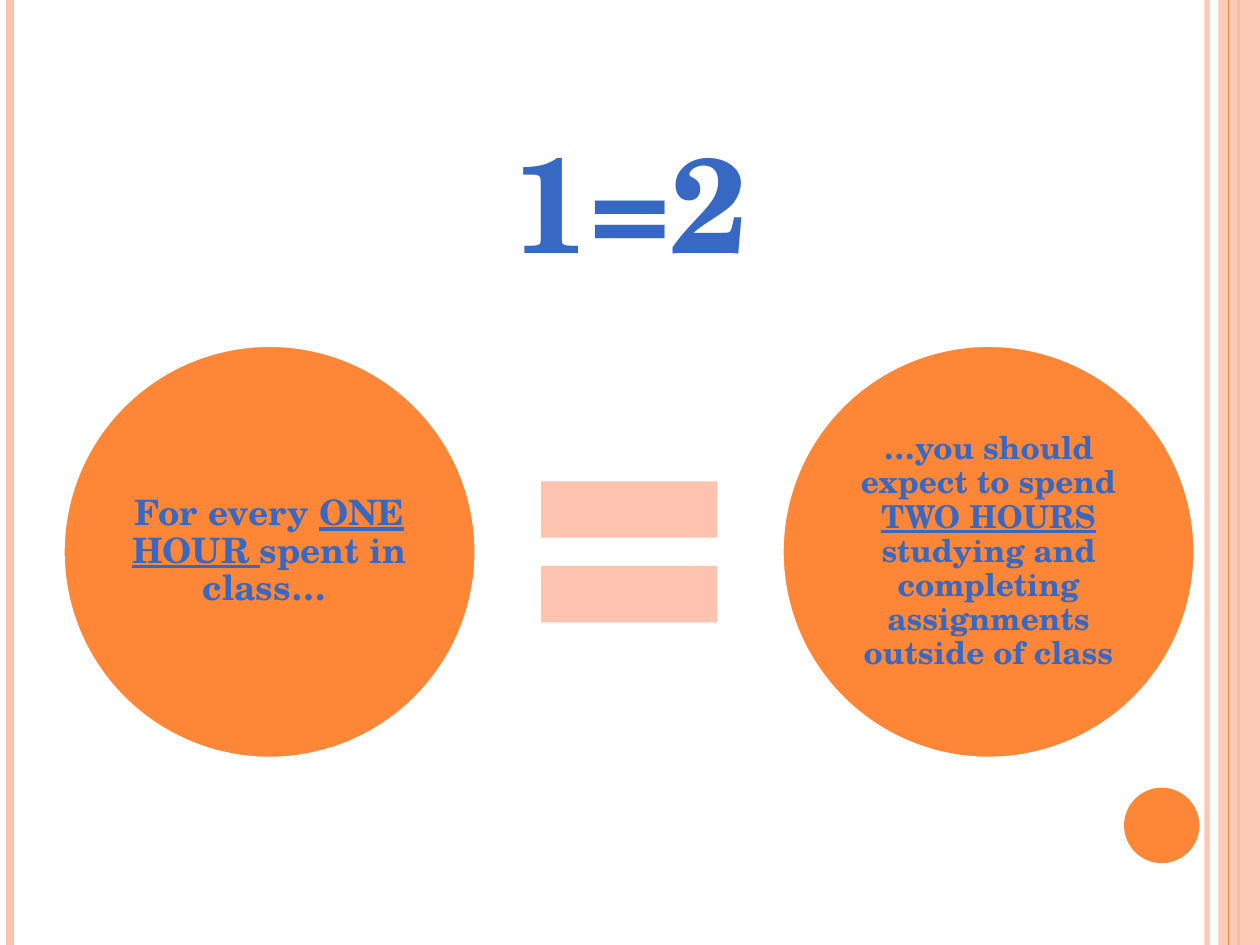
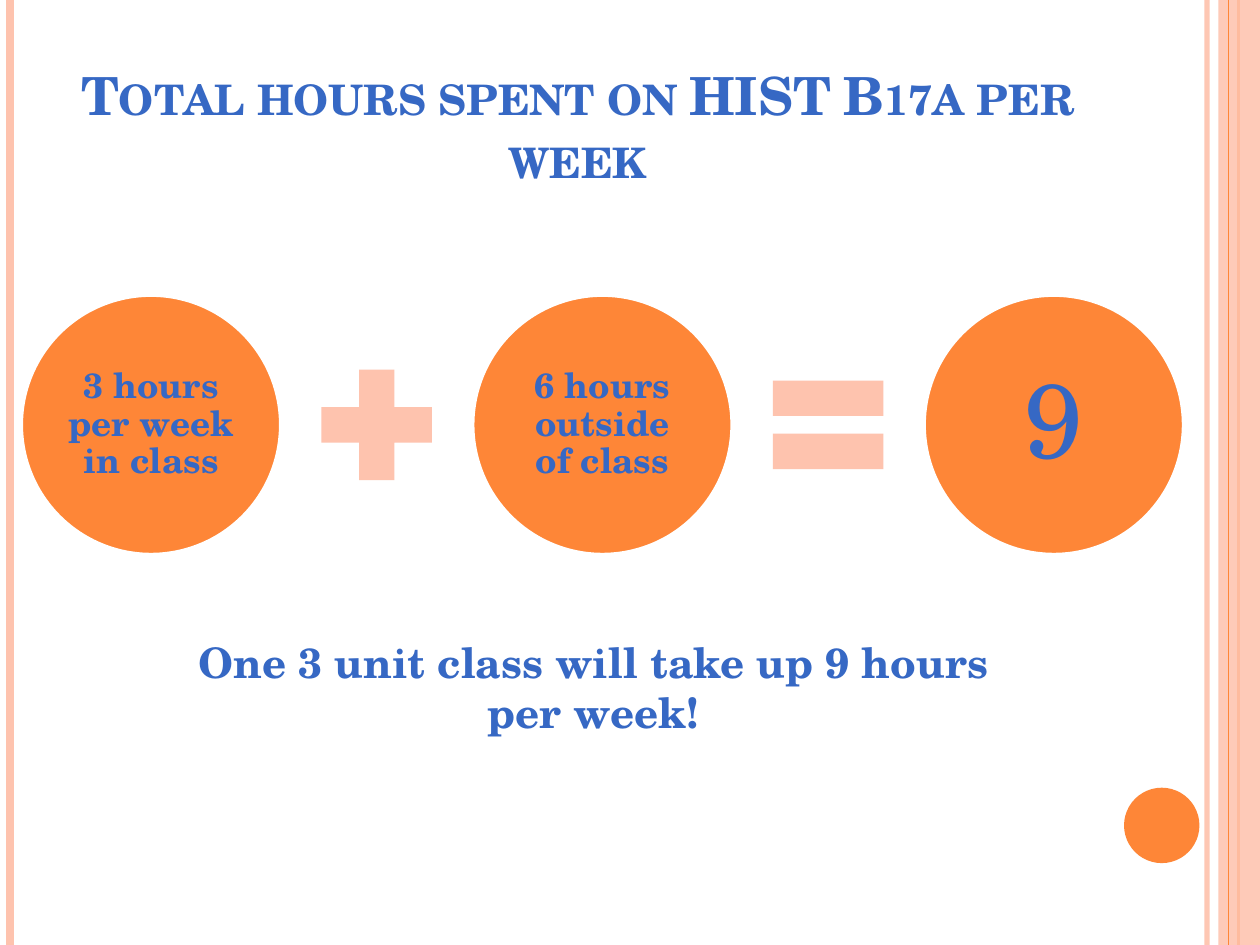
from lxml.etree import SubElement
from pptx import Presentation
from pptx.dml.color import RGBColor
from pptx.enum.shapes import MSO_CONNECTOR, MSO_SHAPE
from pptx.enum.text import MSO_ANCHOR, MSO_AUTO_SIZE, PP_ALIGN
from pptx.oxml.ns import qn
from pptx.util import Cm, Pt

SLIDE_WIDTH, SLIDE_HEIGHT = 25.4, 19.05
TITLE_ONLY = 5


def color(hex_string):
    return RGBColor.from_string(hex_string)


class Deck:
    FONT = "TeX Gyre Schola"
    BLUE, ORANGE, PEACH, WHITE = "3668C4", "FE8637", "FEC3AE", "FFFFFF"

    def __init__(self):
        self.presentation = Presentation()
        self.presentation.slide_width = Cm(SLIDE_WIDTH)
        self.presentation.slide_height = Cm(SLIDE_HEIGHT)
        self.slide = None

    def new_slide(self):
        layout = self.presentation.slide_layouts[TITLE_ONLY]
        self.slide = self.presentation.slides.add_slide(layout)
        self.frame()

    # Edge lines, right band and corner dot shared by all slides
    def frame(self):
        self.edge_line(24.33, self.PEACH, 3, opacity=93)
        self.edge_line(0.21, self.PEACH, 4.5)
        self.edge_line(24.97, self.ORANGE, 1.5)
        band = self.shape(MSO_SHAPE.RECTANGLE, 24.56, 0, 0.84, SLIDE_HEIGHT, self.PEACH)
        self.set_opacity(band, 87)
        self.edge_line(24.77, self.ORANGE, 0.75)
        self.shape(MSO_SHAPE.OVAL, 22.66, 15.88, 1.52, 1.52, self.ORANGE)

    def set_opacity(self, shape, percent):
        rgb = next(shape._element.spPr.iter(qn("a:srgbClr")))
        SubElement(rgb, qn("a:alpha"), val=str(percent * 1000))

    def edge_line(self, x, line_color, width, opacity=None):
        line = self.slide.shapes.add_connector(
            MSO_CONNECTOR.STRAIGHT, Cm(x), Cm(0), Cm(x), Cm(SLIDE_HEIGHT))
        line.line.color.rgb = color(line_color)
        line.line.width = Pt(width)
        SubElement(line._element.spPr, qn("a:effectLst"))
        if opacity:
            self.set_opacity(line, opacity)

    def shape(self, kind, left, top, width, height, fill):
        shape = self.slide.shapes.add_shape(kind, Cm(left), Cm(top), Cm(width), Cm(height))
        shape.shadow.inherit = False
        shape.fill.solid()
        shape.fill.fore_color.rgb = color(fill)
        shape.line.fill.background()
        return shape

    def style(self, paragraph, size, bold=True):
        paragraph.alignment = PP_ALIGN.CENTER
        paragraph.font.name = self.FONT
        paragraph.font.size = Pt(size)
        paragraph.font.bold = bold
        paragraph.font.color.rgb = color(self.BLUE)

    def title(self, text, left, top, width, height, size):
        title = self.slide.shapes.title
        title.left, title.top, title.width, title.height = map(Cm, (left, top, width, height))
        frame = title.text_frame
        frame.text = text
        frame.auto_size = MSO_AUTO_SIZE.NONE
        frame.vertical_anchor = MSO_ANCHOR.BOTTOM
        paragraph = frame.paragraphs[0]
        self.style(paragraph, size)
        paragraph.runs[0]._r.get_or_add_rPr().set("cap", "small")

    def circle(self, left, top, diameter, parts, size, bold=True):
        """Draw a term; every second part of its text is underlined."""
        circle = self.shape(MSO_SHAPE.OVAL, left, top, diameter, diameter, self.ORANGE)
        circle.line.color.rgb = color(self.WHITE)
        circle.line.width = Pt(2)
        frame = circle.text_frame
        frame.word_wrap = True
        frame.vertical_anchor = MSO_ANCHOR.MIDDLE
        frame.margin_left = frame.margin_right = Cm(0.08)
        frame.margin_top = frame.margin_bottom = Cm(0.08)
        paragraph = frame.paragraphs[0]
        paragraph.line_spacing = 0.9
        self.style(paragraph, size, bold)
        for index, text in enumerate(parts):
            run = paragraph.add_run()
            run.text = text
            if index % 2:
                run.font.underline = True

    def equation(self, left, top, diameter, terms, operators):
        """Set circles in a row with an operator centred between each pair."""
        operator_size, gap = 0.58 * diameter, 0.08 * diameter
        step = diameter + operator_size + 2 * gap
        for index, term in enumerate(terms):
            self.circle(left + index * step, top, diameter, *term)
        for index, operator in enumerate(operators):
            self.shape(operator, left + index * step + diameter + gap,
                       top + (diameter - operator_size) / 2,
                       operator_size, operator_size, self.PEACH)

    def caption(self, text, left, top, width, height, size):
        box = self.slide.shapes.add_textbox(Cm(left), Cm(top), Cm(width), Cm(height))
        box.text_frame.word_wrap = True
        box.text_frame.text = text
        self.style(box.text_frame.paragraphs[0], size)


def main():
    deck = Deck()

    # Slide 1: one class hour equals two study hours
    deck.new_slide()
    deck.title("1=2", 1.27, 0.74, 22.86, 5.18, 96)
    deck.equation(1.27, 6.96, 8.33, [
        (["For every ", "ONE HOUR ", "spent in class… "], 20),
        (["…you should expect to spend ", "TWO HOURS ",
          "studying and completing assignments outside of class"], 18),
    ], [MSO_SHAPE.MATH_EQUAL])

    # Slide 2: weekly total
    deck.new_slide()
    deck.title("Total hours spent on HIST B17a per week", 1.27, 0.76, 20.75, 3.18, 30)
    deck.equation(0.43, 5.95, 5.23, [
        (["3 hours per week in class"], 20),
        (["6 hours outside of class"], 20),
        (["9"], 60, False),
    ], [MSO_SHAPE.MATH_PLUS, MSO_SHAPE.MATH_EQUAL])
    deck.caption("One 3 unit class will take up 9 hours per week!", 2.97, 12.7, 17.98, 2.31, 24)

    deck.presentation.save("out.pptx")


if __name__ == "__main__":
    main()
